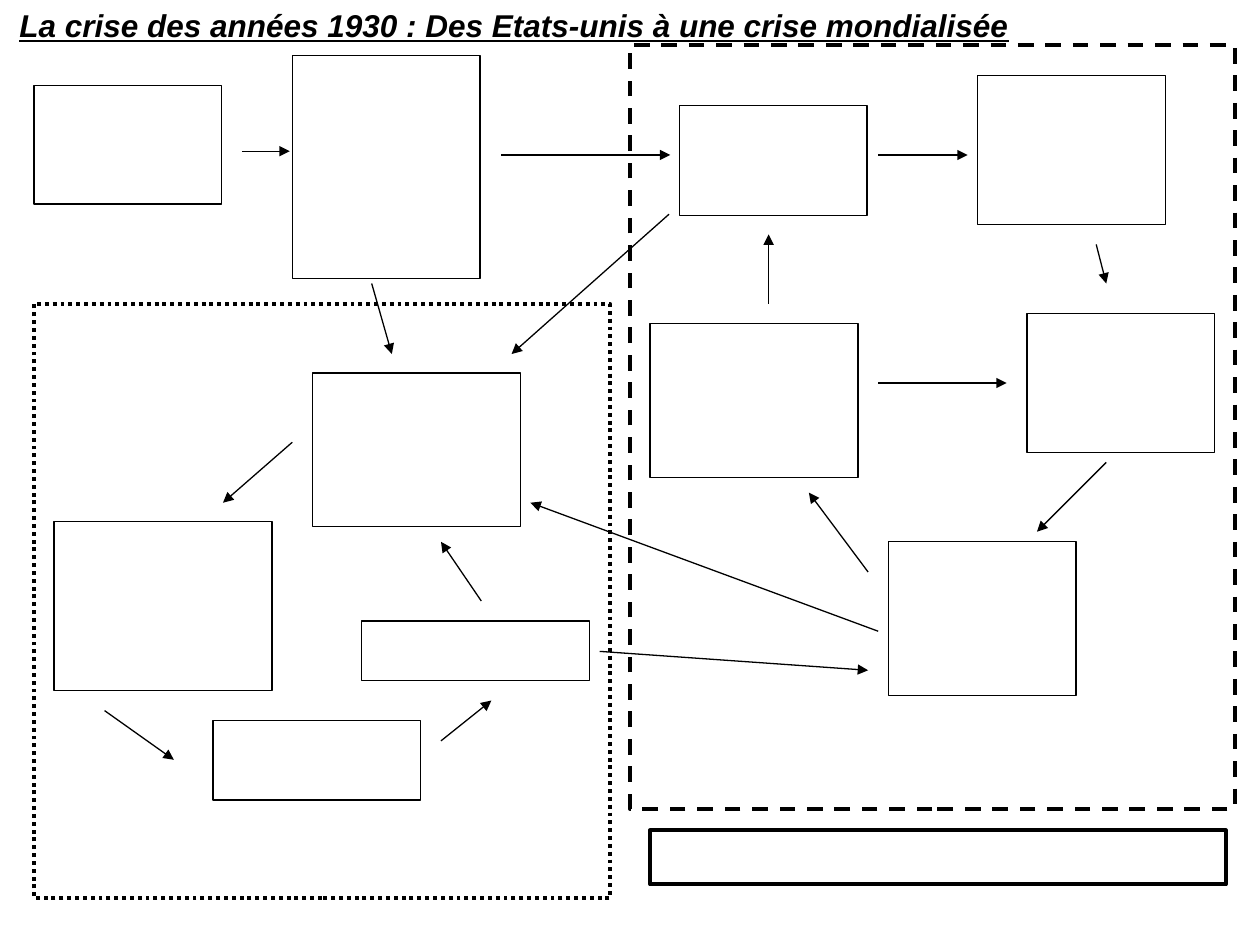
from pptx import Presentation
from pptx.dml.color import RGBColor
from pptx.enum.dml import MSO_LINE
from pptx.enum.shapes import MSO_CONNECTOR, MSO_SHAPE
from pptx.enum.text import MSO_AUTO_SIZE, PP_ALIGN
from pptx.oxml.ns import qn
from pptx.util import Inches, Pt
from lxml.etree import SubElement

COLORS = {"ink": "000000", "paper": "FFFFFF"}
CELL = Inches(10) // 100
TITLE_FORMAT = {"name": "Arial", "size": Pt(18), "bold": True, "italic": True, "underline": True}

BOX_W = 14.9
WIDE_W = 16.5
BOXES = [
    (2.7, 6.8, BOX_W, 9.4),
    (23.2, 4.4, BOX_W, 17.7),
    (53.9, 8.4, BOX_W, 8.7),
    (77.6, 6, BOX_W, 11.8),
    (81.5, 24.9, BOX_W, 11),
    (70.5, 43, BOX_W, 12.2),
    (51.6, 25.7, WIDE_W, 12.2),
    (24.8, 29.6, WIDE_W, 12.2),
    (4.3, 41.4, 17.3, 13.4),
    (16.9, 57.2, WIDE_W, 6.3),
    (28.7, 49.3, 18.1, 4.7),
]
FRAMES = [
    ((50, 3.6, 48, 60.6), MSO_LINE.DASH),
    ((2.7, 24.1, 45.7, 47.2), MSO_LINE.ROUND_DOT),
    ((51.6, 65.9, 45.7, 4.3), None),
]
ARROWS = [
    (19.2, 12, 23, 12),
    (39.8, 12.3, 53.2, 12.3),
    (69.7, 12.3, 76.8, 12.3),
    (87, 19.4, 87.8, 22.5),
    (87.8, 36.7, 82.3, 42.2),
    (68.9, 45.4, 64.2, 39.1),
    (69.7, 30.4, 79.9, 30.4),
    (61, 24.1, 61, 18.6),
    (53.1, 17, 40.6, 28.1),
    (29.5, 22.5, 31.1, 28.1),
    (69.7, 50.1, 42.1, 39.9),
    (23.2, 35.1, 17.7, 39.9),
    (8.3, 56.4, 13.8, 60.3),
    (35, 58.8, 39, 55.6),
    (38.2, 47.7, 35, 43),
    (47.6, 51.7, 68.9, 53.2),
]


def color(name):
    return RGBColor.from_string(COLORS[name])


def grid(cells):
    return [round(n * CELL) for n in cells]


def set_line(sp, width, dash=None):
    sp.line.color.rgb = color("ink")
    for key, value in {"width": Pt(width), "dash_style": dash}.items():
        setattr(sp.line, key, value)


def add_box(s, cells, width=0.75, dash=None, fill="paper"):
    sp = s.shapes.add_shape(MSO_SHAPE.RECTANGLE, *grid(cells))
    sp.shadow.inherit = False
    if fill:
        sp.fill.solid()
        sp.fill.fore_color.rgb = color(fill)
    else:
        sp.fill.background()
    set_line(sp, width, dash)


def add_arrow(s, cells):
    cxn = s.shapes.add_connector(MSO_CONNECTOR.STRAIGHT, *grid(cells))
    set_line(cxn, 0.75)
    SubElement(cxn.line._get_or_add_ln(), qn("a:tailEnd"), type="triangle")
    SubElement(cxn._element.spPr, qn("a:effectLst"))


def add_title(s, cells, text):
    tf = s.shapes.add_textbox(*grid(cells)).text_frame
    for key, value in {"word_wrap": False, "auto_size": MSO_AUTO_SIZE.SHAPE_TO_FIT_TEXT}.items():
        setattr(tf, key, value)
    p = tf.paragraphs[0]
    p.alignment = PP_ALIGN.CENTER
    r = p.add_run()
    r.text = text
    for key, value in TITLE_FORMAT.items():
        setattr(r.font, key, value)
    r.font.color.rgb = color("ink")


def main():
    prs = Presentation()
    prs.slide_width, prs.slide_height = grid((100, 75))
    s = prs.slides.add_slide(prs.slide_layouts[6])
    for cells in BOXES:
        add_box(s, cells)
    for cells, dash in FRAMES:
        add_box(s, cells, 2.25, dash, None)
    for cells in ARROWS:
        add_arrow(s, cells)
    add_title(s, (0.2, 0, 81.2, 4), "La crise des années 1930 : Des Etats-unis à une crise mondialisée")
    prs.save("out.pptx")


if __name__ == "__main__":
    main()
